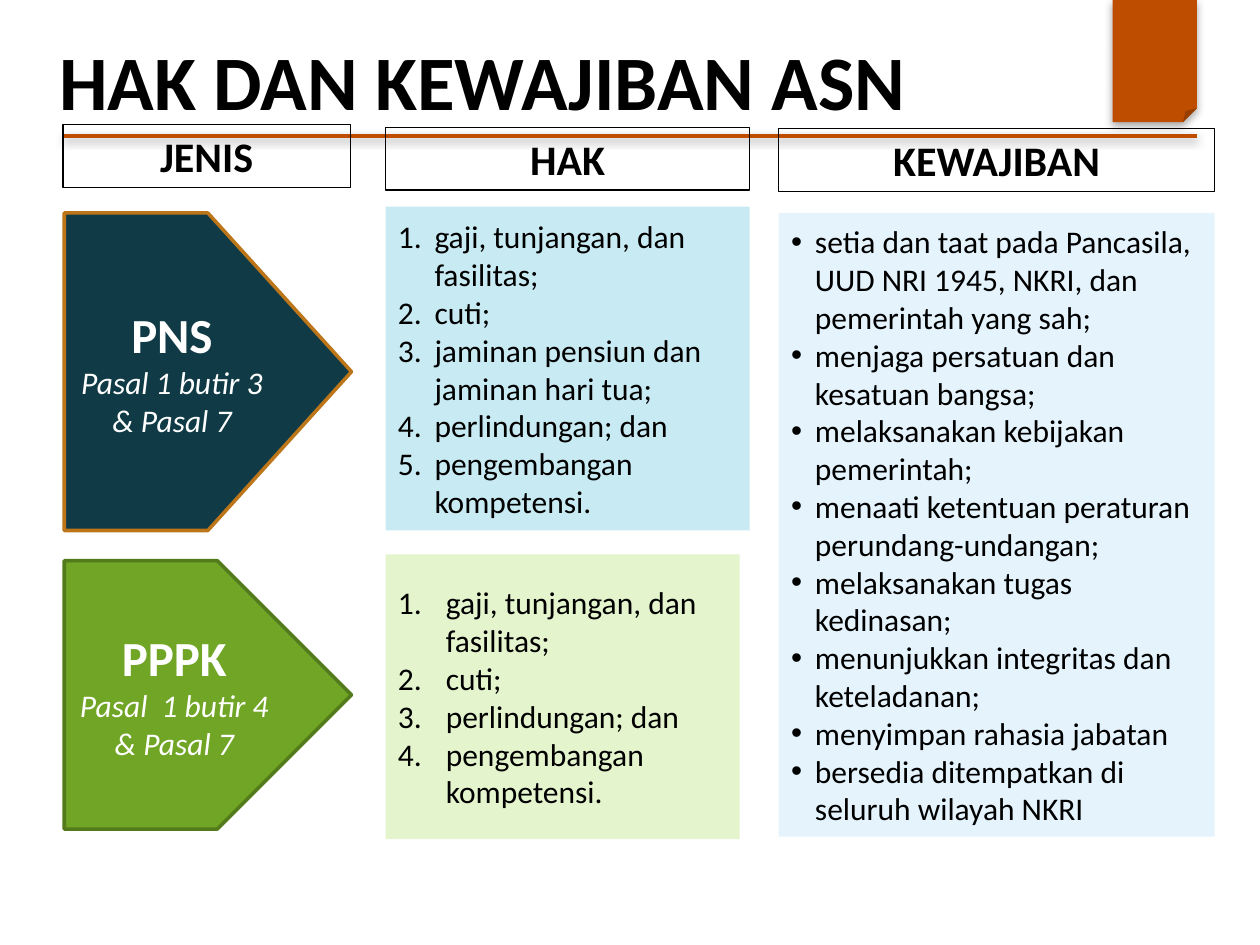
from lxml import etree
from pptx import Presentation
from pptx.dml.color import RGBColor
from pptx.enum.shapes import MSO_CONNECTOR, MSO_SHAPE
from pptx.enum.text import MSO_ANCHOR, MSO_AUTO_SIZE, PP_ALIGN
from pptx.oxml.ns import qn
from pptx.util import Inches, Pt

RECT, ARROW, FOLD = MSO_SHAPE.RECTANGLE, MSO_SHAPE.PENTAGON, MSO_SHAPE.FOLDED_CORNER
LEFT, CENTER = PP_ALIGN.LEFT, PP_ALIGN.CENTER
TOP, MIDDLE = MSO_ANCHOR.TOP, MSO_ANCHOR.MIDDLE

BLACK, WHITE = RGBColor(0, 0, 0), RGBColor(255, 255, 255)
RUST = RGBColor(0xBF, 0x4D, 0x00)
NAVY, AMBER = RGBColor(0x10, 0x3B, 0x46), RGBColor(0xBC, 0x76, 0x19)
GREEN, MOSS = RGBColor(0x70, 0xA5, 0x25), RGBColor(0x53, 0x7A, 0x1B)
AQUA, LIME = RGBColor(0xC8, 0xEA, 0xF2), RGBColor(0xE4, 0xF4, 0xCD)
SKY = RGBColor(0xE4, 0xF3, 0xFC)
FONT = "Calibri"

# Content
TITLE = "HAK DAN KEWAJIBAN ASN"
COLS = [(0.5, 2.28), (3.06, 2.89), (6.18, 3.46)]  # left, width
HEADS = [("JENIS", 0.99), ("HAK", 1.01), ("KEWAJIBAN", 1.02)]  # text, top
HEAD_H = 0.5

# name, articles, fill, line, top, height
KINDS = [
    ("PNS", "Pasal 1 butir 3 & Pasal 7", NAVY, AMBER, 1.69, 2.52),
    ("PPPK", "Pasal  1 butir 4 & Pasal 7", GREEN, MOSS, 4.45, 2.13),
]
RIGHTS = [
    "gaji, tunjangan, dan fasilitas;",
    "cuti;",
    "jaminan pensiun dan jaminan hari tua;",
    "perlindungan; dan",
    "pengembangan kompetensi.",
]
DUTIES = [
    "setia dan taat pada Pancasila, UUD NRI 1945, NKRI, dan pemerintah yang sah;",
    "menjaga persatuan dan kesatuan bangsa;",
    "melaksanakan kebijakan pemerintah;",
    "menaati ketentuan peraturan perundang-undangan;",
    "melaksanakan tugas kedinasan;",
    "menunjukkan integritas dan keteladanan;",
    "menyimpan rahasia jabatan",
    "bersedia ditempatkan di seluruh wilayah NKRI",
]
# items, column, trim of width, top, height, fill, indent, numbered
LISTS = [
    (RIGHTS, 1, 0, 1.64, 2.57, AQUA, 0.29, True),
    (RIGHTS[:2] + RIGHTS[3:], 1, 0.08, 4.4, 2.26, LIME, 0.38, True),
    (DUTIES, 2, 0, 1.69, 4.95, SKY, 0.19, False),
]


def mark(para, indent, numbered):
    """Give a paragraph a hanging number or bullet."""
    props = para._p.get_or_add_pPr()
    props.set("marL", str(Inches(indent)))
    props.set("indent", str(-Inches(indent)))
    etree.SubElement(props, qn("a:buFont"), typeface="+mj-lt" if numbered else "Arial")
    if numbered:
        etree.SubElement(props, qn("a:buAutoNum"), type="arabicPeriod")
    else:
        etree.SubElement(props, qn("a:buChar"), char="•")


def write(shape, lines, size=18, color=BLACK, bold=False, italic=False,
          align=LEFT, anchor=MIDDLE, indent=0, numbered=False):
    """Add lines of text to a shape, after any text it already has."""
    frame = shape.text_frame
    frame.word_wrap = True
    frame.auto_size = MSO_AUTO_SIZE.NONE
    frame.vertical_anchor = anchor
    for line in lines:
        para = frame.paragraphs[0] if not frame.text else frame.add_paragraph()
        para.alignment = align
        if indent:
            mark(para, indent, numbered)
        run = para.add_run()
        run.text = line
        font = run.font
        font.name, font.size, font.color.rgb = FONT, Pt(size), color
        font.bold, font.italic = bold, italic


def draw(slide, kind, box, fill=None, line=None, width=0.75):
    shape = slide.shapes.add_shape(kind, *map(Inches, box))
    shape.shadow.inherit = False
    if fill is None:
        shape.fill.background()
    else:
        shape.fill.solid()
        shape.fill.fore_color.rgb = fill
    if line is None:
        shape.line.fill.background()
    else:
        shape.line.color.rgb = line
        shape.line.width = Pt(width)
    return shape


def shade(shape, alpha, dist):
    """Cast a soft black shadow straight down."""
    props = shape._element.spPr
    effects = props.find(qn("a:effectLst"))
    if effects is None:
        effects = etree.SubElement(props, qn("a:effectLst"))
    cast = etree.SubElement(effects, qn("a:outerShdw"), blurRad=str(Pt(5)),
                            dist=str(Pt(dist)), dir="5400000", rotWithShape="0")
    black = etree.SubElement(cast, qn("a:srgbClr"), val=str(BLACK))
    etree.SubElement(black, qn("a:alpha"), val=str(alpha * 1000))


def main():
    deck = Presentation()
    deck.slide_width, deck.slide_height = Inches(10), Inches(7.5)
    slide = deck.slides.add_slide(deck.slide_layouts[5])

    # Ribbon and rule
    ribbon = draw(slide, FOLD, (8.83, 0, 0.67, 0.97), RUST)
    shade(ribbon, 35, 1.8)
    rule = slide.shapes.add_connector(
        MSO_CONNECTOR.STRAIGHT, *map(Inches, (0.5, 1.08, 9.5, 1.08)))
    rule.line.color.rgb, rule.line.width = RUST, Pt(2)
    shade(rule, 38, 1.6)

    # Title
    title = slide.shapes.title
    title.left, title.top, title.width, title.height = map(
        Inches, (0.37, 0.21, 9.13, 0.84))
    write(title, [TITLE], size=44, bold=True)

    # Column heads
    for (text, top), (left, width) in zip(HEADS, COLS):
        head = draw(slide, RECT, (left, top, width, HEAD_H), line=BLACK)
        write(head, [text], size=24, bold=True, align=CENTER, anchor=TOP)

    # Kinds of staff
    left, width = COLS[0]
    for name, note, fill, line, top, height in KINDS:
        arrow = draw(slide, ARROW, (left + 0.01, top, width, height), fill, line, 2)
        write(arrow, [name], size=28, color=WHITE, bold=True, align=CENTER)
        write(arrow, [note], color=WHITE, italic=True, align=CENTER)

    # Rights and duties
    for items, col, trim, top, height, fill, indent, numbered in LISTS:
        left, width = COLS[col]
        panel = draw(slide, RECT, (left, top, width - trim, height), fill)
        write(panel, items, indent=indent, numbered=numbered)

    deck.save("out.pptx")


if __name__ == "__main__":
    main()
